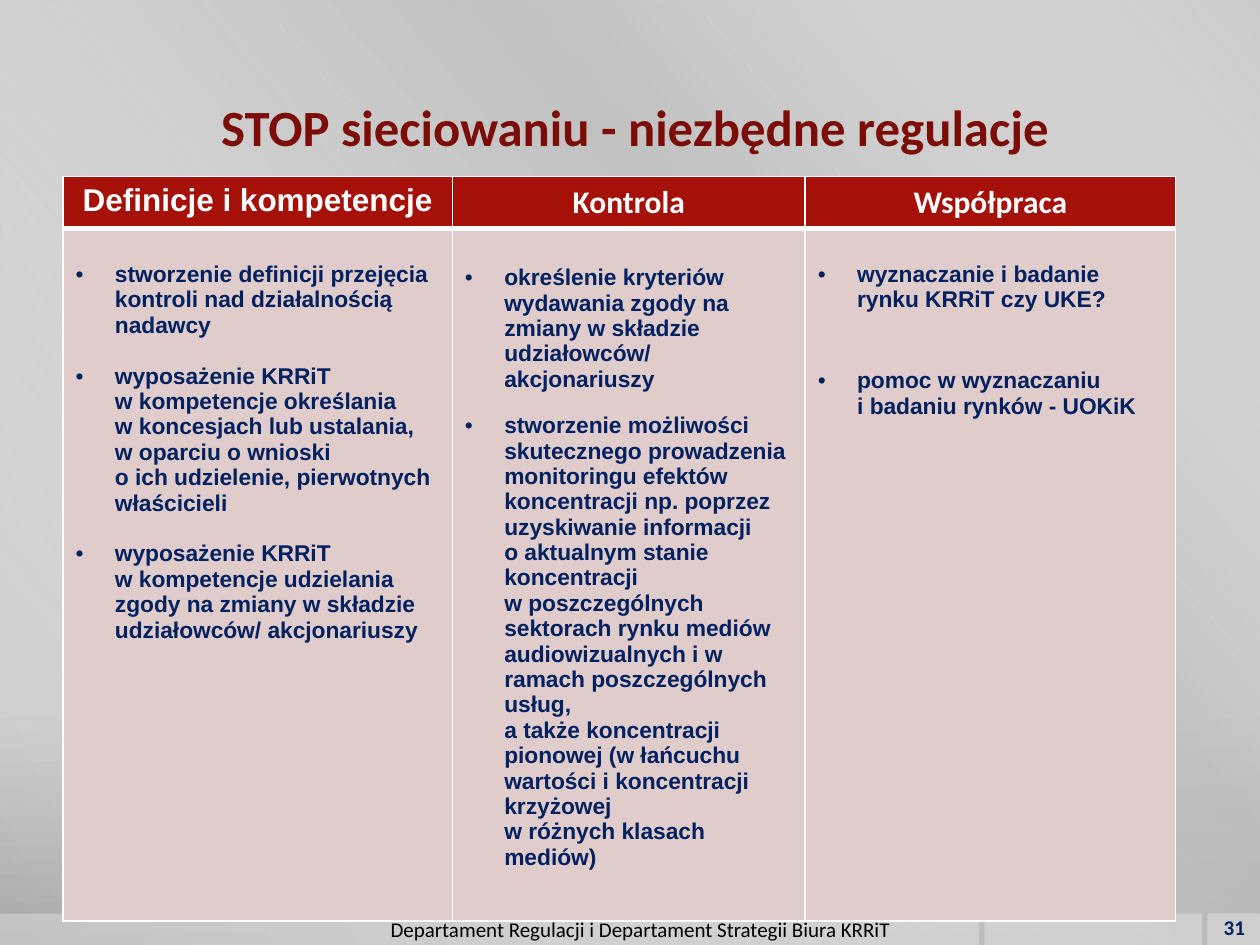
"""Build the slide on regulations against media networking."""
from dataclasses import dataclass
from typing import Any

from lxml.etree import SubElement
from pptx import Presentation
from pptx.dml.color import RGBColor
from pptx.enum.text import MSO_ANCHOR, PP_ALIGN
from pptx.oxml.ns import qn
from pptx.util import Pt

WHITE, RED, PINK, NAVY = "FFFFFF", "A51009", "E1CCCC", "002060"
INDENT = Pt(22.5)
TITLE_FONT = {"name": "Calibri", "size": Pt(29), "bold": True}
FOOTER_FONT = {"name": "Calibri", "size": Pt(12), "bold": False}
BODY_FONT = {"name": "Arial", "size": Pt(13), "bold": True}


@dataclass
class Column:
    """One table column: heading, points and their spacing."""
    heading: str
    font: str
    width: float
    top: float
    gap: float
    points: list[str]


@dataclass
class Label:
    """One line of text in the bottom bar."""
    text: str
    box: tuple[float, float, float, float]
    align: PP_ALIGN
    color: str
    bold: bool


COLUMNS = [
    Column("Definicje i kompetencje", "Arial", 222.5, 19.2, 14.5, [
        "stworzenie definicji przejęcia kontroli nad działalnością nadawcy",
        "wyposażenie KRRiT \vw kompetencje określania \vw koncesjach lub ustalania, "
        "\vw oparciu o wnioski \vo ich udzielenie, pierwotnych właścicieli",
        "wyposażenie KRRiT \vw kompetencje udzielania zgody na zmiany w składzie "
        "udziałowców/ akcjonariuszy",
    ]),
    Column("Kontrola", "Calibri", 201.6, 21, 12, [
        "określenie kryteriów wydawania zgody na zmiany w składzie udziałowców/ akcjonariuszy",
        "stworzenie możliwości skutecznego prowadzenia monitoringu efektów koncentracji "
        "np. poprzez uzyskiwanie informacji \vo aktualnym stanie koncentracji "
        "\vw poszczególnych sektorach rynku mediów audiowizualnych i w ramach "
        "poszczególnych usług, \va także koncentracji pionowej (w łańcuchu wartości "
        "i koncentracji krzyżowej \vw różnych klasach mediów)",
    ]),
    Column("Współpraca", "Calibri", 211.7, 19.2, 31.8, [
        "wyznaczanie i badanie rynku KRRiT czy UKE?",
        "pomoc w wyznaczaniu \vi badaniu rynków - UOKiK",
    ]),
]
LABELS = [
    Label("31", (688.3, 520.5, 30.2, 18), PP_ALIGN.RIGHT, NAVY, True),
    Label("Departament Regulacji i Departament Strategii Biura KRRiT",
          (105, 522, 522, 18), PP_ALIGN.CENTER, "000000", False),
]
BARS = [(690, 30), (562.5, 124.5), (0, 559.5)]


def rgb(color: str) -> RGBColor:
    """Turn a hex string into a colour."""
    return RGBColor.from_string(color)


def style(p: Any, color: str, values: dict[str, Any]) -> None:
    """Apply font values and a colour to every run of a paragraph."""
    for r in p.runs:
        for name, value in values.items():
            setattr(r.font, name, value)
        r.font.color.rgb = rgb(color)


def set_alpha(el: Any, percent: float) -> None:
    """Give a colour element an opacity."""
    SubElement(el, qn("a:alpha"), val=str(int(percent * 1000)))


def gradient(fill: Any, el: Any, stops: list[tuple[int, str, int]], angle: int) -> None:
    """Fill with a linear gradient of position, colour and opacity stops."""
    fill.gradient()
    grad = next(el.iter(qn("a:gradFill")))
    gs_lst = grad.find(qn("a:gsLst"))
    for gs in list(gs_lst):
        gs_lst.remove(gs)
    for pos, color, opacity in stops:
        gs = SubElement(gs_lst, qn("a:gs"), pos=str(pos * 1000))
        clr = SubElement(gs, qn("a:srgbClr"), val=color)
        if opacity < 100:
            set_alpha(clr, opacity)
    grad.find(qn("a:lin")).set("ang", str(angle * 60000))


def add_rect(s: Any, left: float, top: float, width: float, height: float) -> Any:
    """Add a rectangle without line or shadow."""
    sp = s.shapes.add_shape(1, Pt(left), Pt(top), Pt(width), Pt(height))
    sp.shadow.inherit = False
    sp.line.fill.background()
    return sp


def add_backdrop(s: Any) -> None:
    """Draw the background, its sheen and the bottom bar."""
    fill = s.background.fill
    gradient(fill, s.element, [(0, "CBCBCB", 100), (76, "C8C8C8", 100), (100, "A7A7A7", 100)], 90)
    sheen = add_rect(s, 0, 0, 720, 540)
    gradient(sheen.fill, sheen.element, [(0, WHITE, 0), (34, "BFBFBF", 61),
                                         (38, "BFBFBF", 76), (100, WHITE, 0)], 140)
    for left, width in BARS:
        bar = add_rect(s, left, 522, width, 18)
        bar.fill.solid()
        bar.fill.fore_color.rgb = rgb(WHITE)
        set_alpha(next(bar.element.spPr.iter(qn("a:srgbClr"))), 30)


def add_title(s: Any, text: str) -> None:
    """Place the title above the backdrop."""
    sp = s.shapes.title
    s.shapes.element.append(sp.element)
    sp.left, sp.top, sp.width, sp.height = Pt(42.5), Pt(36), Pt(648), Pt(72)
    tf = sp.text_frame
    tf.margin_left = tf.margin_right = 0
    tf.vertical_anchor = MSO_ANCHOR.MIDDLE
    p = tf.paragraphs[0]
    p.text, p.alignment = text, PP_ALIGN.CENTER
    style(p, "7C0C07", TITLE_FONT)


def add_label(s: Any, label: Label) -> None:
    """Write one label of the bottom bar."""
    tf = s.shapes.add_textbox(*map(Pt, label.box)).text_frame
    tf.word_wrap, tf.vertical_anchor = True, MSO_ANCHOR.MIDDLE
    p = tf.paragraphs[0]
    p.text, p.alignment = label.text, label.align
    style(p, label.color, FOOTER_FONT | {"bold": label.bold})


def format_cell(cell: Any, color: str, top: float, bottom: float) -> None:
    """Give a cell white borders and a solid fill."""
    tc_pr = cell._tc.get_or_add_tcPr()
    for side, width in zip("LRTB", (1, 1, top, bottom)):
        ln = SubElement(tc_pr, qn(f"a:ln{side}"), w=str(Pt(width)))
        SubElement(SubElement(ln, qn("a:solidFill")), qn("a:srgbClr"), val=WHITE)
    cell.fill.solid()
    cell.fill.fore_color.rgb = rgb(color)


def add_points(cell: Any, column: Column) -> None:
    """Write the bulleted points of a column."""
    tf = cell.text_frame
    cell.margin_top = Pt(column.top)
    for i, text in enumerate(column.points):
        p = tf.add_paragraph() if i else tf.paragraphs[0]
        p.text = text
        p_pr = p._p.get_or_add_pPr()
        p_pr.set("marL", str(INDENT))
        p_pr.set("indent", str(-INDENT))
        SubElement(p_pr, qn("a:buFont"), typeface="Arial")
        SubElement(p_pr, qn("a:buChar"), char="•")
        if i:
            p.space_before = Pt(column.gap)
        style(p, NAVY, BODY_FONT)


def add_columns(s: Any, columns: list[Column]) -> None:
    """Draw the table, one column at a time."""
    width = sum(c.width for c in columns)
    table = s.shapes.add_table(2, len(columns), Pt(36), Pt(101), Pt(width), Pt(417)).table
    table.rows[0].height, table.rows[1].height = Pt(29.5), Pt(387.5)
    for i, column in enumerate(columns):
        table.columns[i].width = Pt(column.width)
        head, body = table.cell(0, i), table.cell(1, i)
        format_cell(head, RED, 1, 3)
        format_cell(body, PINK, 3, 1)
        p = head.text_frame.paragraphs[0]
        p.text, p.alignment = column.heading, PP_ALIGN.CENTER
        style(p, WHITE, {"name": column.font, "size": Pt(18), "bold": True})
        add_points(body, column)


def main() -> None:
    """Build and save the presentation."""
    prs = Presentation()
    prs.slide_width, prs.slide_height = Pt(720), Pt(540)
    s = prs.slides.add_slide(prs.slide_layouts[5])
    add_backdrop(s)
    add_title(s, "STOP sieciowaniu - niezbędne regulacje ")
    for label in LABELS:
        add_label(s, label)
    add_columns(s, COLUMNS)
    prs.save("out.pptx")


if __name__ == "__main__":
    main()
